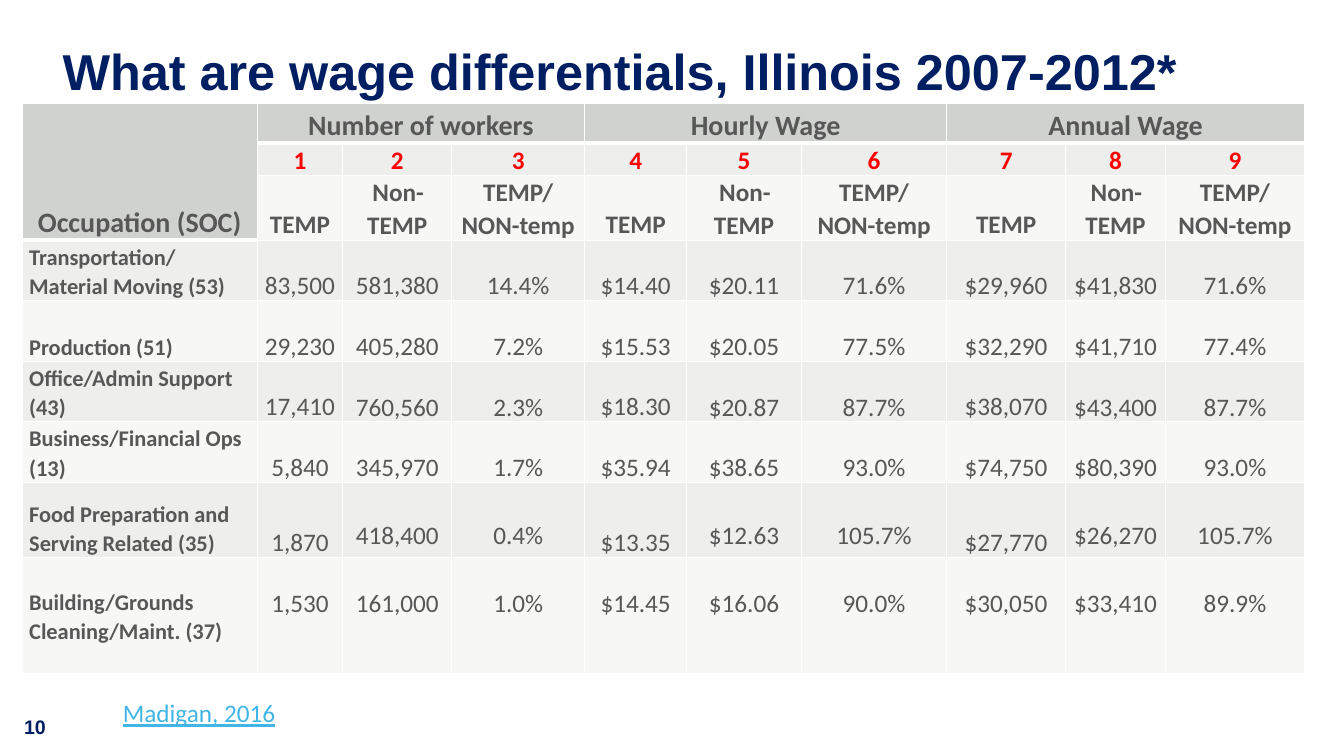
import pptx
import pptx.util
import pptx.dml.color
import pptx.enum.text
import pptx.oxml.ns
from lxml import etree

# Content
TITLE = "What are wage differentials, Illinois 2007-2012*"
SOURCE = "Madigan, 2016"
PAGE_NUMBER = "10"
CORNER = "Occupation (SOC)"
GROUPS = ["Number of workers", "Hourly Wage", "Annual Wage"]
MEASURES = ["TEMP", "Non-TEMP", "TEMP/\nNON-temp"]
OCCUPATIONS = [
    ("Transportation/Material Moving (53)", "83,500", "581,380", "14.4%",
     "$14.40", "$20.11", "71.6%", "$29,960", "$41,830", "71.6%"),
    ("Production (51)", "29,230", "405,280", "7.2%",
     "$15.53", "$20.05", "77.5%", "$32,290", "$41,710", "77.4%"),
    ("Office/Admin Support (43)", "17,410", "760,560", "2.3%",
     "$18.30", "$20.87", "87.7%", "$38,070", "$43,400", "87.7%"),
    ("Business/Financial Ops (13)", "5,840", "345,970", "1.7%",
     "$35.94", "$38.65", "93.0%", "$74,750", "$80,390", "93.0%"),
    ("Food Preparation and Serving Related (35)", "1,870", "418,400", "0.4%",
     "$13.35", "$12.63", "105.7%", "$27,770", "$26,270", "105.7%"),
    ("Building/Grounds Cleaning/Maint. (37)", "1,530", "161,000", "1.0%",
     "$14.45", "$16.06", "90.0%", "$30,050", "$33,410", "89.9%"),
]

# Grid and colours
COLUMNS = [2.33, 0.85, 1.08, 1.32, 1.01, 1.14, 1.44, 1.18, 0.99, 1.38]
ROWS = [0.39, 0.31, 0.62, 0.58, 0.51, 0.58, 0.58, 0.75, 1.15]
HEADER_ROWS = 3
NAVY, GREY, RED, SKY, WHITE = "001E62", "575757", "FF0000", "41B6E6", "FFFFFF"
HEADER_FILL, BANDS = "D0D2CF", ["F7F7F6", "EEEEED"]
LABEL_LINE = 0.29

inch = pptx.util.Inches
Align = pptx.enum.text.PP_ALIGN
Anchor = pptx.enum.text.MSO_ANCHOR


def color(value):
    return pptx.dml.color.RGBColor.from_string(value)


def write(frame, text, size, font, ink, bold=False, align=Align.LEFT,
          spacing=None, underline=None):
    frame.word_wrap = True
    frame.text = text
    for para in frame.paragraphs:
        para.alignment = align
        para.line_spacing = spacing
        for span in para.runs:
            span.font.size = pptx.util.Pt(size)
            span.font.name = font
            span.font.bold = bold
            span.font.underline = underline
            span.font.color.rgb = color(ink)


def add_text(place, text, size, font, ink, inset=None, **style):
    box = slide.shapes.add_textbox(*[inch(length) for length in place])
    frame = box.text_frame
    if inset is not None:
        frame.margin_left = frame.margin_right = inch(inset)
        frame.margin_top = frame.margin_bottom = inch(inset)
    write(frame, text, size, font, ink, **style)


def add_borders(cell, bottom):
    """Draw white cell edges, 1 pt except for the given bottom edge."""
    properties = cell._tc.get_or_add_tcPr()
    for place, (edge, width) in enumerate(
            [("lnL", 1), ("lnR", 1), ("lnT", 1), ("lnB", bottom)]):
        line = etree.Element(pptx.oxml.ns.qn("a:" + edge),
                             w=str(pptx.util.Pt(width)))
        fill = etree.SubElement(line, pptx.oxml.ns.qn("a:solidFill"))
        etree.SubElement(fill, pptx.oxml.ns.qn("a:srgbClr"), val=WHITE)
        properties.insert(place, line)


def fill_cell(row, column, text, size=18, ink=GREY, bold=True,
              align=Align.CENTER, spacing=1.07, anchor=Anchor.BOTTOM, top=0):
    cell = table.cell(row, column)
    cell.margin_left = cell.margin_right = inch(0.07)
    cell.margin_top, cell.margin_bottom = inch(top), 0
    cell.vertical_anchor = anchor
    write(cell.text_frame, text, size, "Calibri", ink, bold, align, spacing)


deck = pptx.Presentation()
deck.slide_width, deck.slide_height = inch(13.33), inch(7.5)
slide = deck.slides.add_slide(deck.slide_layouts[6])

# Page number and title
add_text((0.14, 7.04, 0.66, 0.34), PAGE_NUMBER, 14, "Arial", NAVY, bold=True)
add_text((0.62, 0.47, 12.08, 0.89), TITLE, 36, "Arial", NAVY,
         inset=0, bold=True, spacing=0.9)

# Table with fills and edges
table = slide.shapes.add_table(
    len(ROWS), len(COLUMNS), inch(0.22), inch(1.03),
    inch(sum(COLUMNS)), inch(sum(ROWS))).table
table.first_row = table.horz_banding = False
for column, width in zip(table.columns, COLUMNS):
    column.width = inch(width)
for row, height in zip(table.rows, ROWS):
    row.height = inch(height)
for r in range(len(ROWS)):
    for c in range(len(COLUMNS)):
        cell = table.cell(r, c)
        header = r == 0 or (c == 0 and r < HEADER_ROWS)
        cell.fill.solid()
        cell.fill.fore_color.rgb = color(HEADER_FILL if header else BANDS[r % 2])
        add_borders(cell, 3 if header else 1)

# Header rows
table.cell(0, 0).merge(table.cell(HEADER_ROWS - 1, 0))
fill_cell(0, 0, CORNER, 20)
for g, group in enumerate(GROUPS):
    first = 1 + g * len(MEASURES)
    table.cell(0, first).merge(table.cell(0, first + len(MEASURES) - 1))
    fill_cell(0, first, group, 20)
    for m, measure in enumerate(MEASURES):
        fill_cell(1, first + m, str(first + m), ink=RED)
        fill_cell(2, first + m, measure)

# Occupation rows; the last one hangs from the top
for r, (label, *values) in enumerate(OCCUPATIONS, HEADER_ROWS):
    last = r == len(ROWS) - 1
    fill_cell(r, 0, label, 16, align=Align.LEFT,
              anchor=Anchor.TOP if last else Anchor.BOTTOM,
              top=LABEL_LINE if last else 0)
    for c, value in enumerate(values, 1):
        is_temp = c % len(MEASURES) == 1
        anchor = Anchor.BOTTOM if is_temp else Anchor.MIDDLE
        fill_cell(r, c, value, bold=False, spacing=2.0,
                  anchor=Anchor.TOP if last else anchor)

# Source
add_text((1.12, 6.87, 1.79, 0.4), SOURCE, 18, "Calibri", SKY, underline=True)

deck.save("out.pptx")
